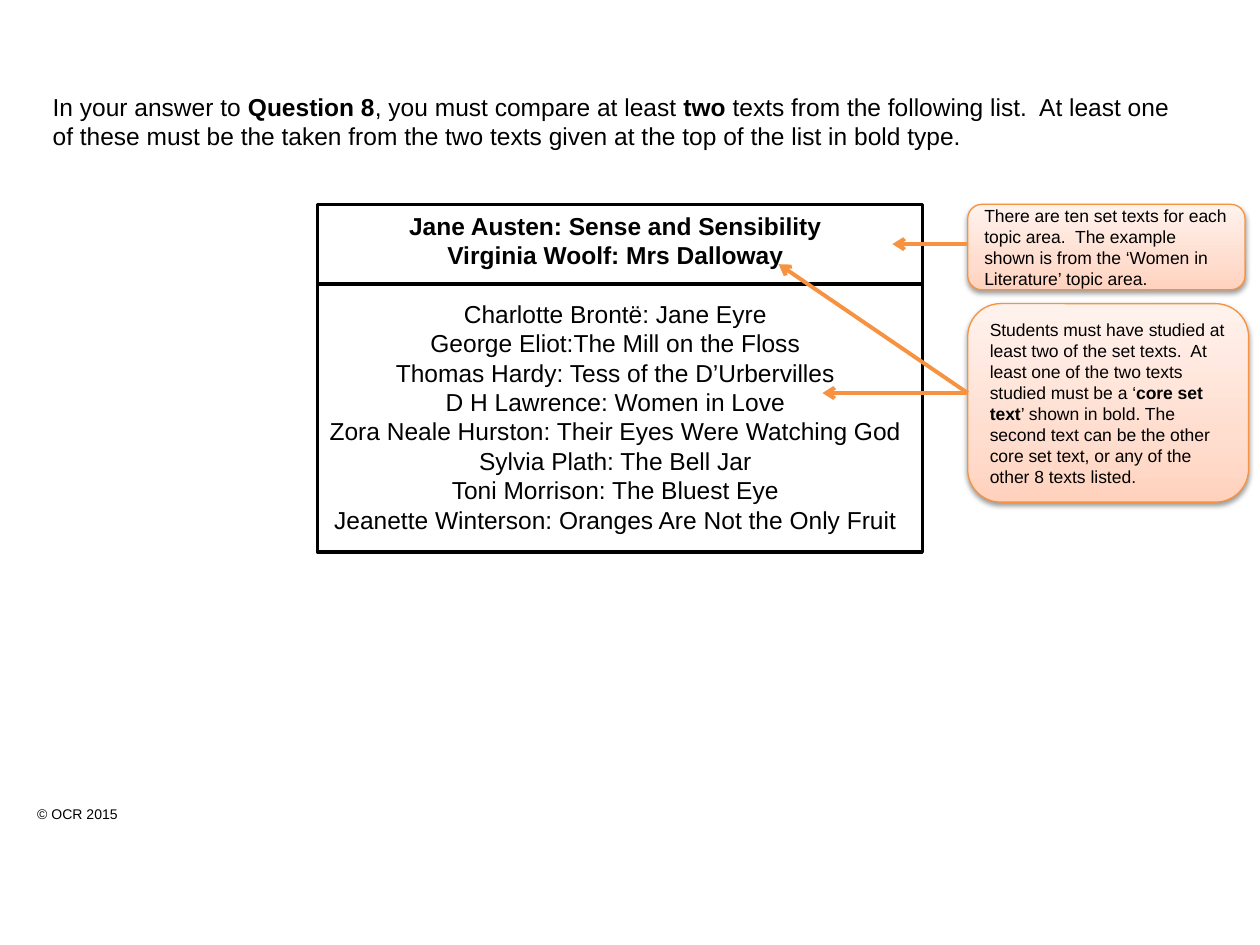
from copy import deepcopy

from lxml.etree import SubElement
from pptx import Presentation
from pptx.dml.color import RGBColor
from pptx.enum.shapes import MSO_CONNECTOR, MSO_SHAPE
from pptx.enum.text import MSO_ANCHOR, PP_ALIGN
from pptx.oxml.ns import qn
from pptx.util import Pt

THEME = {
    "font": "Arial",
    "text": RGBColor.from_string("000000"),
    "accent": RGBColor.from_string("F69240"),
    "callout_stops": [(0, "FFD2BD"), (0.35, "FFDED0"), (1, "FFF2ED")],
    "body_size": 14,
    "callout_size": 10,
    "footer_size": 8,
}

# A paragraph is a list of (text, bold) runs; boxes are left, top, width, height.
COPYRIGHT = [("© OCR 2015", False)]
INTRO = [
    ("In your answer to ", False),
    ("Question 8", True),
    (", you must compare at least ", False),
    ("two", True),
    (" texts from the following list.  At least one of these must be the taken "
     "from the two texts given at the top of the list in bold type.", False),
]
CORE_TEXTS = ["Jane Austen: Sense and Sensibility", "Virginia Woolf: Mrs Dalloway"]
OTHER_TEXTS = [
    "Charlotte Brontë: Jane Eyre",
    "George Eliot:The Mill on the Floss",
    "Thomas Hardy: Tess of the D’Urbervilles",
    "D H Lawrence: Women in Love",
    "Zora Neale Hurston: Their Eyes Were Watching God",
    "Sylvia Plath: The Bell Jar",
    "Toni Morrison: The Bluest Eye",
    "Jeanette Winterson: Oranges Are Not the Only Fruit",
]
CALLOUT_LEFT = 553
CALLOUTS = [
    {
        "box": (CALLOUT_LEFT, 116.8, 158.5, 48.8),
        "runs": [("There are ten set texts for each topic area.  The example shown "
                  "is from the ‘Women in Literature’ topic area.", False)],
        "arrow_y": 139.5,
        "targets": [(510, 139.5)],
    },
    {
        "box": (CALLOUT_LEFT, 173.5, 160.5, 113.4),
        "runs": [
            ("Students must have studied at least two of the set texts.  At least "
             "one of the two texts studied must be a ‘", False),
            ("core set text", True),
            ("’ shown in bold. The second text can be the other core set text, "
             "or any of the other 8 texts listed.", False),
        ],
        "arrow_y": 224.6,
        "targets": [(470, 224.6), (445, 151)],
    },
]
FRAME_LEFT, FRAME_TOP, FRAME_WIDTH = 181.5, 116.8, 345.6
FRAME_HEIGHTS = [45.4, 153.2]
LIST_GAP = 16.8


def points(values):
    return [Pt(value) for value in values]


def add_runs(para, runs, size):
    for text, bold in runs:
        span = para.add_run()
        span.text = text
        span.font.name = THEME["font"]
        span.font.size = Pt(size)
        span.font.bold = bold
        span.font.color.rgb = THEME["text"]


def add_text(page, area, paragraphs, size, align=PP_ALIGN.LEFT):
    frame = page.shapes.add_textbox(*points(area)).text_frame
    frame.word_wrap = True
    for index, runs in enumerate(paragraphs):
        para = frame.add_paragraph() if index else frame.paragraphs[0]
        para.alignment = align
        add_runs(para, runs, size)
    return frame


def add_callout(page, area, runs):
    box = page.shapes.add_shape(MSO_SHAPE.ROUNDED_RECTANGLE, *points(area))
    box.line.color.rgb = THEME["accent"]
    box.line.width = Pt(0.75)

    box.fill.gradient()
    box.fill.gradient_angle = 90
    stop_list = box.element.spPr.find(".//" + qn("a:gsLst"))
    stop_list.insert(1, deepcopy(stop_list[0]))
    for stop, (position, colour) in zip(box.fill.gradient_stops, THEME["callout_stops"]):
        stop.position = position
        stop.color.rgb = RGBColor.from_string(colour)

    box.shadow.inherit = False
    effects = box.element.spPr.find(qn("a:effectLst"))
    shadow = SubElement(effects, qn("a:outerShdw"), blurRad=str(Pt(3.1)),
                        dist=str(Pt(1.6)), dir="5400000", rotWithShape="0")
    colour = SubElement(shadow, qn("a:srgbClr"), val=str(THEME["text"]))
    SubElement(colour, qn("a:alpha"), val="38000")

    frame = box.text_frame
    frame.word_wrap = True
    frame.vertical_anchor = MSO_ANCHOR.MIDDLE
    frame.paragraphs[0].alignment = PP_ALIGN.LEFT
    add_runs(frame.paragraphs[0], runs, THEME["callout_size"])


def add_arrow(page, start, end):
    arrow = page.shapes.add_connector(MSO_CONNECTOR.STRAIGHT, *points(start + end))
    arrow.line.color.rgb = THEME["accent"]
    arrow.line.width = Pt(2.25)
    properties = arrow.element.spPr
    SubElement(properties.find(qn("a:ln")), qn("a:tailEnd"), type="arrow")
    SubElement(properties, qn("a:effectLst"))


def add_frames(page):
    top = FRAME_TOP
    for height in FRAME_HEIGHTS:
        frame = page.shapes.add_shape(
            MSO_SHAPE.RECTANGLE, *points((FRAME_LEFT, top, FRAME_WIDTH, height)))
        frame.fill.background()
        frame.line.color.rgb = THEME["text"]
        frame.line.width = Pt(2)
        frame.shadow.inherit = False
        top += height


def main():
    deck = Presentation()
    deck.slide_width, deck.slide_height = Pt(720), Pt(540)
    page = deck.slides.add_slide(deck.slide_layouts[6])

    add_text(page, (14.2, 457, 136, 17), [COPYRIGHT], THEME["footer_size"])
    add_text(page, (23, 49, 663, 92), [INTRO], THEME["body_size"])

    set_texts = [[(text, True)] for text in CORE_TEXTS]
    set_texts += [[(text, False)] for text in OTHER_TEXTS]
    text_list = add_text(page, (173.2, FRAME_TOP, 357, 216), set_texts,
                         THEME["body_size"], PP_ALIGN.CENTER)
    text_list.paragraphs[len(CORE_TEXTS)].space_before = Pt(LIST_GAP)
    add_frames(page)

    for callout in CALLOUTS:
        add_callout(page, callout["box"], callout["runs"])
        for target in callout["targets"]:
            add_arrow(page, (CALLOUT_LEFT, callout["arrow_y"]), target)

    deck.save("out.pptx")


if __name__ == "__main__":
    main()
